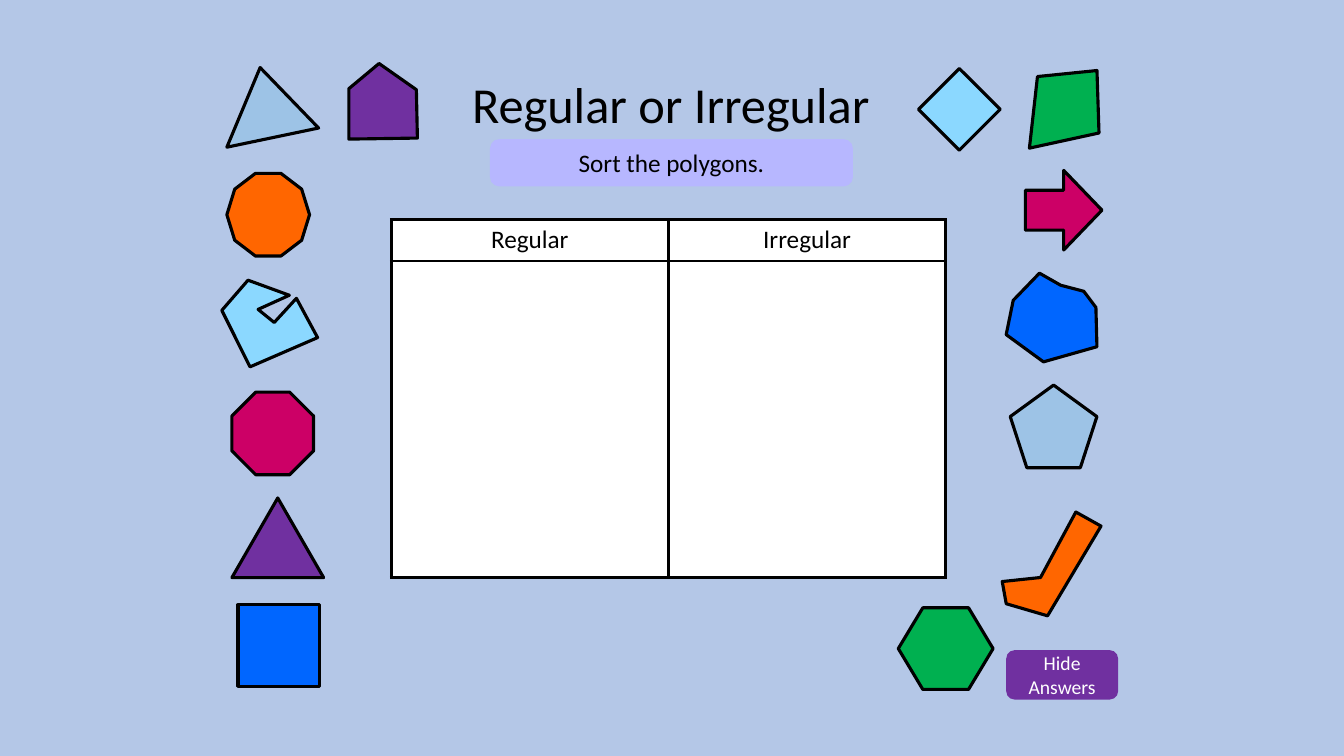
"""Build a slide for sorting regular and irregular polygons."""
import pptx
import pptx.dml.color
import pptx.enum.shapes
import pptx.enum.text
import pptx.oxml
import pptx.oxml.ns
import pptx.util

Inches = pptx.util.Inches
Pt = pptx.util.Pt
KIND = pptx.enum.shapes.MSO_SHAPE

HUES = {
    "back": "B4C7E7", "black": "000000", "white": "FFFFFF",
    "lilac": "B7B7FF", "purple": "7030A0", "mist": "9DC3E6",
    "sky": "8BD8FF", "green": "00B050", "pink": "CC0066",
    "orange": "FF6600", "blue": "0066FF",
}

PRESETS = [
    (KIND.REGULAR_PENTAGON, "mist", (10.02, 3.82, 0.86, 0.82)),
    (KIND.DIAMOND, "sky", (9.11, 0.68, 0.81, 0.81)),
    (KIND.HEXAGON, "green", (8.91, 6.03, 0.94, 0.81)),
    (KIND.OCTAGON, "pink", (2.3, 3.89, 0.81, 0.82)),
    (KIND.DECAGON, "orange", (2.25, 1.72, 0.82, 0.82)),
    (KIND.RECTANGLE, "blue", (2.36, 6, 0.81, 0.81)),
    (KIND.ISOSCELES_TRIANGLE, "purple", (2.3, 4.94, 0.91, 0.79)),
    (KIND.RIGHT_ARROW, "pink", (10.17, 1.69, 0.76, 0.79)),
]

OUTLINES = [
    ("mist", [(2.58, 0.67), (2.25, 1.46), (3.16, 1.27)]),
    ("green", [(10.29, 0.76), (10.21, 1.47), (10.9, 1.32), (10.88, 0.7)]),
    ("purple", [(3.46, 0.88), (3.46, 1.38), (4.14, 1.37), (4.13, 0.89),
                (3.76, 0.63)]),
    ("orange", [(9.94, 5.77), (9.98, 5.99), (10.39, 6.11), (10.92, 5.22),
                (10.67, 5.08), (10.32, 5.73)]),
    ("sky", [(2.46, 2.78), (2.2, 3.08), (2.48, 3.64), (3.15, 3.35),
             (2.94, 2.96), (2.72, 3.2), (2.56, 3.07), (2.87, 2.93)]),
    ("blue", [(10.31, 2.71), (10.05, 2.98), (9.98, 3.32), (10.35, 3.59),
              (10.88, 3.44), (10.87, 3.05), (10.75, 2.89), (10.52, 2.83)]),
]


def tint(name):
    """Return the named colour."""
    return pptx.dml.color.RGBColor.from_string(HUES[name])


def paint(item, hue):
    """Fill a shape, slide background or cell with one colour."""
    item.fill.solid()
    item.fill.fore_color.rgb = tint(hue)


def write(frame, text, size, hue="black"):
    """Set centred text and its font."""
    frame.text = text
    for para in frame.paragraphs:
        para.alignment = pptx.enum.text.PP_ALIGN.CENTER
        for run in para.runs:
            run.font.name = "Calibri"
            run.font.size = Pt(size)
            run.font.color.rgb = tint(hue)


def finish(shape, hue):
    """Give a polygon its fill and black outline."""
    shape.shadow.inherit = False
    paint(shape, hue)
    shape.line.color.rgb = tint("black")
    shape.line.width = Pt(2.25)


def add_preset(slide, kind, hue, box):
    """Add a preset polygon."""
    shape = slide.shapes.add_shape(kind, *map(Inches, box))
    finish(shape, hue)
    return shape


def add_outline(slide, hue, points):
    """Add a polygon through the given corners."""
    first, *rest = [tuple(map(Inches, point)) for point in points]
    build = slide.shapes.build_freeform(*first)
    build.add_line_segments(rest, close=True)
    finish(build.convert_to_shape(), hue)


def add_label(slide, text, box, hue, size, ink, curve):
    """Add a rounded label without an outline."""
    shape = add_preset(slide, KIND.ROUNDED_RECTANGLE, hue, box)
    shape.line.fill.background()
    shape.adjustments[0] = curve
    shape.text_frame.vertical_anchor = pptx.enum.text.MSO_ANCHOR.MIDDLE
    write(shape.text_frame, text, size, ink)


def add_title(slide, text):
    """Place and format the title."""
    title = slide.shapes.title
    title.left, title.top, title.width, title.height = map(
        Inches, (1.85, 0.52, 9.61, 1.09))
    frame = title.text_frame
    frame.auto_size = pptx.enum.text.MSO_AUTO_SIZE.NONE
    frame.vertical_anchor = pptx.enum.text.MSO_ANCHOR.MIDDLE
    write(frame, text, 36)
    frame.paragraphs[0].line_spacing = 0.9


def border(cell):
    """Draw black lines on all sides of a cell."""
    props = cell._tc.get_or_add_tcPr()
    for spot, side in enumerate(("lnL", "lnR", "lnT", "lnB")):
        props.insert(spot, pptx.oxml.parse_xml(
            f'<a:{side} {pptx.oxml.ns.nsdecls("a")} w="{Pt(2.25)}">'
            f'<a:solidFill><a:srgbClr val="{HUES["black"]}"/></a:solidFill>'
            f'</a:{side}>'))


def add_grid(slide, heads):
    """Add the sorting table with an empty row under its heads."""
    table = slide.shapes.add_table(
        2, len(heads), *map(Inches, (3.88, 2.18, 5.5, 3.55))).table
    for row, height in zip(table.rows, (0.41, 3.14)):
        row.height = Inches(height)
    for cell in table.iter_cells():
        paint(cell, "white")
        border(cell)
    for col, head in enumerate(heads):
        table.columns[col].width = Inches(2.75)
        write(table.cell(0, col).text_frame, head, 18)


def main():
    """Build and save the slide."""
    deck = pptx.Presentation()
    deck.slide_width, deck.slide_height = Inches(13.33), Inches(7.5)
    slide = deck.slides.add_slide(deck.slide_layouts[5])
    paint(slide.background, "back")
    add_title(slide, "Regular or Irregular")
    add_grid(slide, ["Regular", "Irregular"])
    add_label(slide, "Sort the polygons.", (4.86, 1.38, 3.6, 0.47),
              "lilac", 18, "black", 0.2)
    add_label(slide, "Hide\nAnswers", (9.98, 6.45, 1.11, 0.49),
              "purple", 14, "white", 0.17)
    for kind, hue, box in PRESETS:
        shape = add_preset(slide, kind, hue, box)
        if kind == KIND.HEXAGON:
            shape.adjustments[0] = 0.3
    for hue, points in OUTLINES:
        add_outline(slide, hue, points)
    deck.save("out.pptx")


if __name__ == "__main__":
    main()
